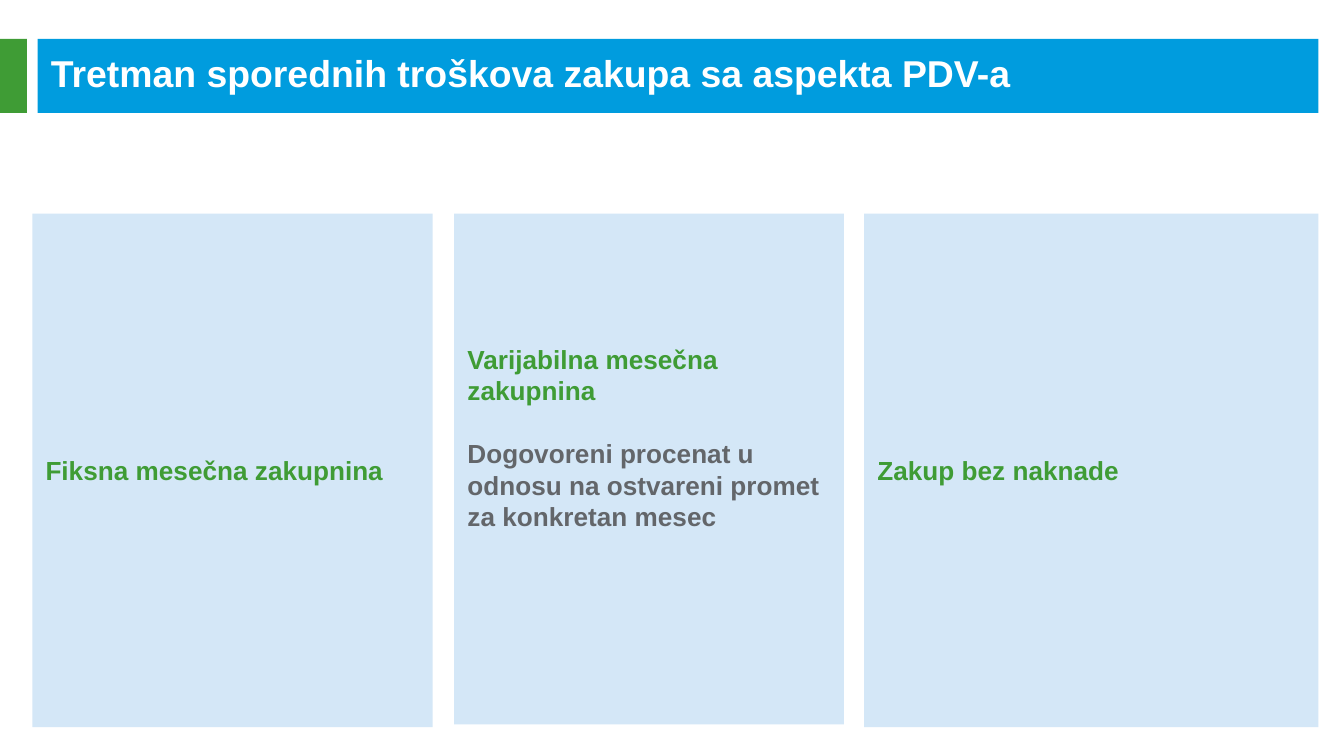
from pptx import Presentation
from pptx.dml.color import RGBColor
from pptx.enum.shapes import MSO_SHAPE
from pptx.enum.text import MSO_ANCHOR, PP_ALIGN
from pptx.util import Inches, Pt

COLOURS = {
    "blue": "009CDE",
    "green": "3F9C35",
    "pale": "D4E7F7",
    "grey": "63666A",
    "white": "FFFFFF",
}


def colour(name):
    return RGBColor.from_string(COLOURS[name])


def add_text(para, text, font="Arial", size=14, ink="green", gap=0):
    para.alignment = PP_ALIGN.LEFT
    para.space_before = Pt(gap)
    span = para.add_run()
    span.text = text
    span.font.name = font
    span.font.size = Pt(size)
    span.font.bold = True
    span.font.color.rgb = colour(ink)


class SlideBuilder:
    paragraph_gap = 17

    def __init__(self, page):
        self.page = page

    def bar(self, left, top, width, height, fill):
        shape = self.page.shapes.add_shape(
            MSO_SHAPE.RECTANGLE,
            Inches(left), Inches(top), Inches(width), Inches(height))
        shape.shadow.inherit = False
        shape.fill.solid()
        shape.fill.fore_color.rgb = colour(fill)
        shape.line.fill.background()
        return shape

    def title(self, left, top, width, height, text):
        box = self.page.shapes.add_textbox(
            Inches(left), Inches(top), Inches(width), Inches(height))
        frame = box.text_frame
        frame.word_wrap = True
        frame.vertical_anchor = MSO_ANCHOR.MIDDLE
        frame.margin_top = frame.margin_bottom = 0
        add_text(frame.paragraphs[0], text, size=20, ink="white")

    def card(self, left, top, width, height, heading, detail=None, bottom=0.05):
        frame = self.bar(left, top, width, height, "pale").text_frame
        frame.word_wrap = True
        frame.vertical_anchor = MSO_ANCHOR.MIDDLE
        frame.margin_bottom = Inches(bottom)
        add_text(frame.paragraphs[0], heading)
        if detail:
            add_text(frame.add_paragraph(), detail, ink="grey",
                     gap=self.paragraph_gap)


def main():
    deck = Presentation()
    deck.slide_width = Inches(10)
    deck.slide_height = deck.slide_width * 9 // 16
    builder = SlideBuilder(deck.slides.add_slide(deck.slide_layouts[6]))

    builder.bar(0.28, 0.29, 9.53, 0.55, "blue")
    builder.bar(0, 0.29, 0.2, 0.55, "green")
    builder.title(0.28, 0.39, 9.36, 0.3,
                  "Tretman sporednih troškova zakupa sa aspekta PDV-a")

    card_top = 1.59
    builder.card(3.38, card_top, 2.9, 3.8, "Varijabilna mesečna zakupnina",
                 detail="Dogovoreni procenat u odnosu na ostvareni promet "
                        "za konkretan mesec",
                 bottom=0.52)
    builder.card(0.24, card_top, 2.98, 3.82, "Fiksna mesečna zakupnina")
    builder.card(6.43, card_top, 3.38, 3.82, "Zakup bez naknade")

    deck.save("out.pptx")


if __name__ == "__main__":
    main()
